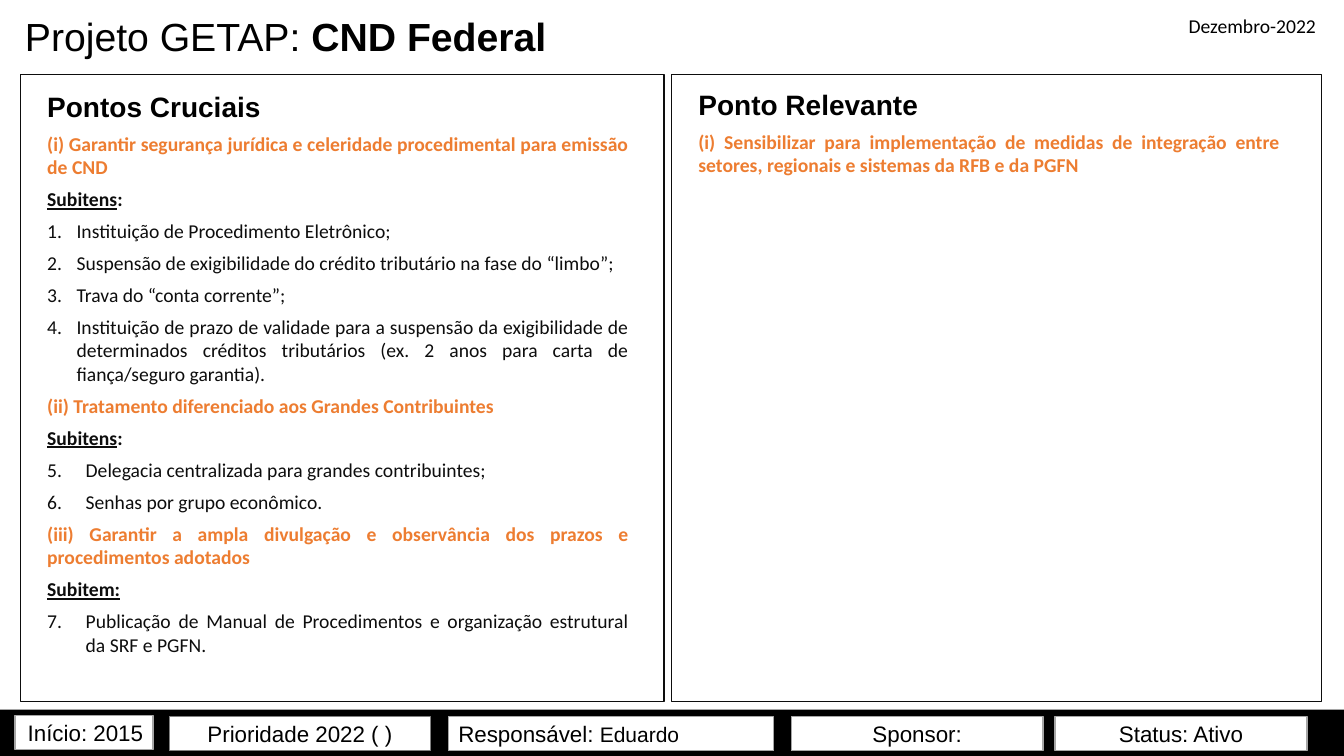
import pptx
import pptx.util
import pptx.dml.color
import pptx.enum.shapes
import pptx.enum.text
import lxml.etree

Cm, Pt = pptx.util.Cm, pptx.util.Pt
ALIGN, ANCHOR = pptx.enum.text.PP_ALIGN, pptx.enum.text.MSO_ANCHOR
COLORS = {"black": "000000", "white": "FFFFFF", "ink": "0D0D0D",
          "orange": "ED7D31", "gray": "A6A6A6", "dark_gray": "808080"}

prs = pptx.Presentation()
prs.slide_width, prs.slide_height = Cm(33.87), Cm(19.05)
s = prs.slides.add_slide(prs.slide_layouts[6])


def add_rect(x, y, w, h, fill=None, line=None):
    sp = s.shapes.add_shape(pptx.enum.shapes.MSO_SHAPE.RECTANGLE, Cm(x), Cm(y), Cm(w), Cm(h))
    sp.shadow.inherit = False
    if fill:
        sp.fill.solid()
        sp.fill.fore_color.rgb = pptx.dml.color.RGBColor.from_string(COLORS[fill])
    else:
        sp.fill.background()
    if line:
        sp.line.color.rgb = pptx.dml.color.RGBColor.from_string(COLORS[line])
        sp.line.width = Pt(1)
    else:
        sp.line.fill.background()
    return sp


def style(r, size, font="Arial", color="black", bold=False, underline=False):
    r.font.size, r.font.name = Pt(size), font
    r.font.bold, r.font.underline = bold, underline
    r.font.color.rgb = pptx.dml.color.RGBColor.from_string(COLORS[color])


# Title and date
for x, y, w, h, anchor, align, parts in [
    (0.38, 0.13, 32.56, 1.5, ANCHOR.BOTTOM, ALIGN.LEFT,
     [("Projeto GETAP: ", 28, "Arial", False), ("CND Federal", 28, "Arial", True)]),
    (29.64, 0.13, 3.84, 1.04, ANCHOR.MIDDLE, ALIGN.CENTER,
     [("Dezembro-2022", 14, "Calibri", False)]),
]:
    tf = s.shapes.add_textbox(Cm(x), Cm(y), Cm(w), Cm(h)).text_frame
    tf.word_wrap, tf.vertical_anchor = True, anchor
    p = tf.paragraphs[0]
    p.alignment = align
    if anchor == ANCHOR.BOTTOM:
        p.line_spacing = 0.9
    for text, size, font, bold in parts:
        r = p.add_run()
        r.text = text
        style(r, size, font, bold=bold)

# Panels: (kind, text), where a number as kind is the item's number
crucial = [
    ("title", "Pontos Cruciais"),
    ("topic", "(i) Garantir segurança jurídica e celeridade procedimental para emissão de CND"),
    ("label", "Subitens"),
    (1, "Instituição de Procedimento Eletrônico;"),
    (2, "Suspensão de exigibilidade do crédito tributário na fase do “limbo”;"),
    (3, "Trava do “conta corrente”;"),
    (4, "Instituição de prazo de validade para a suspensão da exigibilidade de determinados "
        "créditos tributários (ex. 2 anos para carta de fiança/seguro garantia)."),
    ("topic", "(ii) Tratamento diferenciado aos Grandes Contribuintes"),
    ("label", "Subitens"),
    (5, "Delegacia centralizada para grandes contribuintes;"),
    (6, "Senhas por grupo econômico."),
    ("topic", "(iii) Garantir a ampla divulgação e observância dos prazos e procedimentos adotados"),
    ("label", "Subitem:"),
    (7, "Publicação de Manual de Procedimentos e organização estrutural da SRF e PGFN."),
]
relevant = [
    ("title", "Ponto Relevante"),
    ("topic", "(i) Sensibilizar para implementação de medidas de integração entre setores, "
              "regionais e sistemas da RFB e da PGFN"),
]
list_start = {1: 1, 2: 1, 3: 1, 4: 1, 5: 5, 6: 5, 7: 7}
for x, w, text_y, content in [(0.51, 16.23, 2.13, crucial), (16.92, 16.38, 2.08, relevant)]:
    add_rect(x, 1.88, w, 15.8, line="ink")
    tf = add_rect(x + 0.43, text_y, 15.16, 14.83, fill="white").text_frame
    tf.word_wrap, tf.vertical_anchor = True, ANCHOR.TOP
    for i, (kind, text) in enumerate(content):
        p = tf.paragraphs[0] if i == 0 else tf.add_paragraph()
        p.text = text
        p.alignment = ALIGN.JUSTIFY
        if i:
            p.space_before = Pt(6)
        r = p.runs[0]
        if kind == "title":
            style(r, 20, bold=True)
        elif kind == "topic":
            style(r, 14, "Calibri", "orange", bold=True)
        elif kind == "label":
            style(r, 14, "Calibri", "ink", bold=True, underline=True)
            if not text.endswith(":"):
                r = p.add_run()
                r.text = ":"
                style(r, 14, "Calibri", "ink", bold=True)
        else:
            style(r, 14, "Calibri", "ink")
            indent = Cm(0.74 if kind < 5 else 0.97)
            pPr = p._p.get_or_add_pPr()
            pPr.set("marL", str(indent))
            pPr.set("indent", str(-indent))
            bullet = lxml.etree.SubElement(pPr, pptx.oxml.ns.qn("a:buAutoNum"))
            bullet.set("type", "arabicPeriod")
            bullet.set("startAt", str(list_start[kind]))

# Footer band with status boxes
add_rect(0, 17.88, 33.87, 1.17, fill="black")
for x, y, w, line, align, parts in [
    (0.38, 18.03, 3.48, "gray", ALIGN.RIGHT, [("Início: 2015", 16)]),
    (4.27, 18.06, 6.58, "dark_gray", ALIGN.CENTER, [("Prioridade 2022 ( )", 16)]),
    (11.3, 18.06, 8.2, "gray", ALIGN.LEFT, [("Responsável: ", 16), ("Eduardo", 15)]),
    (19.94, 18.06, 6.35, "gray", ALIGN.CENTER, [("Sponsor:", 16)]),
    (26.59, 18.06, 6.35, "gray", ALIGN.CENTER, [("Status: Ativo", 16)]),
]:
    tf = add_rect(x, y, w, 0.86, "white", line).text_frame
    tf.word_wrap, tf.vertical_anchor = True, ANCHOR.MIDDLE
    p = tf.paragraphs[0]
    p.alignment = align
    for text, size in parts:
        r = p.add_run()
        r.text = text
        style(r, size)

prs.save("out.pptx")
